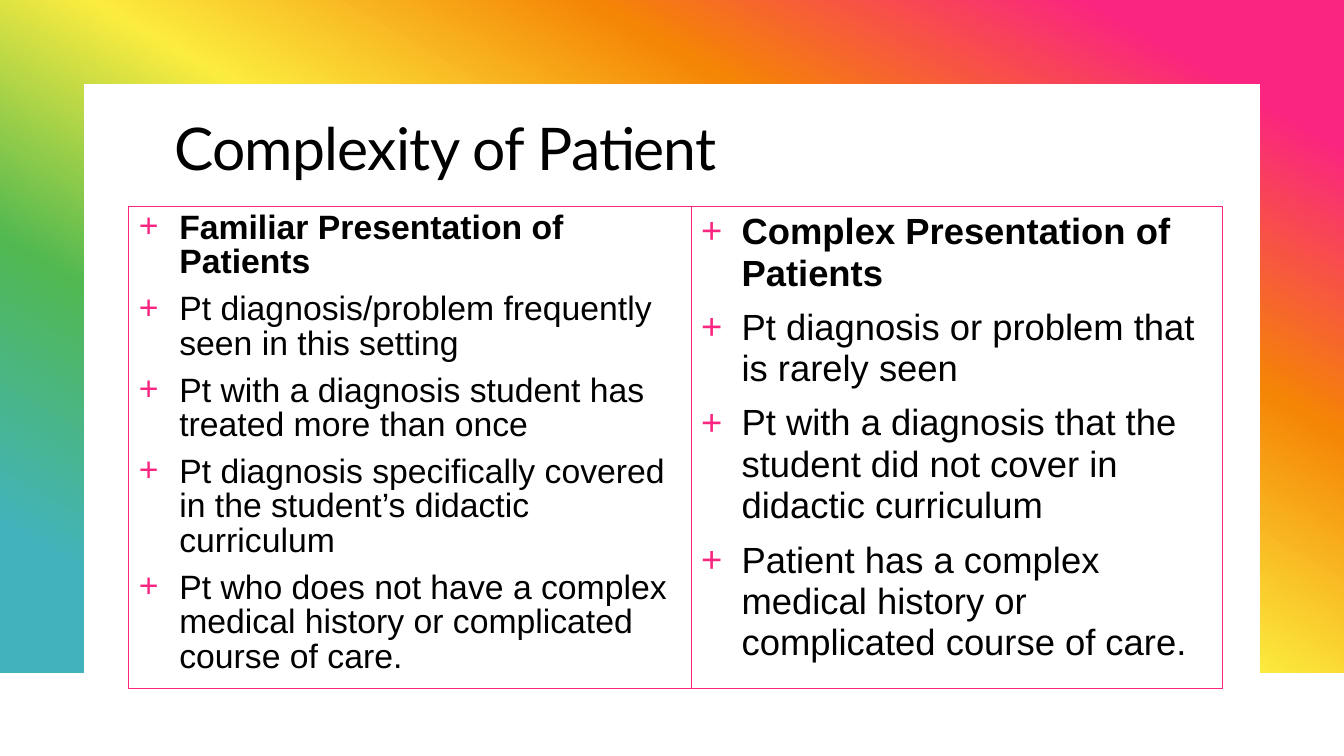
from copy import deepcopy

from lxml import etree
from pptx import Presentation
from pptx.dml.color import RGBColor
from pptx.enum.shapes import MSO_SHAPE
from pptx.enum.text import MSO_ANCHOR, PP_ALIGN
from pptx.oxml.ns import qn
from pptx.util import Cm, Pt

RECTANGLE = MSO_SHAPE.RECTANGLE
TOP = MSO_ANCHOR.TOP
LEFT = PP_ALIGN.LEFT
PINK = "FA2481"
RAINBOW = [(0.1, PINK), (0.3, "F58505"), (0.5, "FCEC3F"), (0.7, "51B851"), (0.9, "42B3BD")]
COLUMN_TOP, COLUMN_HEIGHT = 5.21, 12.14
INDENT = Cm(1.02)


def color(hex_string):
    return RGBColor.from_string(hex_string)


def add_text(frame, paragraphs, size, font, line_spacing, bullet=None, bold_first=False,
             space_before=0, letter_spacing=None):
    frame.word_wrap = True
    frame.vertical_anchor = TOP
    for index, text in enumerate(paragraphs):
        paragraph = frame.add_paragraph() if index else frame.paragraphs[0]
        paragraph.alignment = LEFT
        paragraph.line_spacing = line_spacing
        paragraph.space_before = Pt(space_before)
        run = paragraph.add_run()
        run.text = text
        run.font.name = font
        run.font.size = Pt(size)
        run.font.bold = bold_first and index == 0
        run.font.color.rgb = color("000000")
        if letter_spacing:
            run.font._element.set("spc", str(round(letter_spacing * 100)))
        if bullet:
            properties = paragraph._p.get_or_add_pPr()
            properties.set("marL", str(INDENT))
            properties.set("indent", str(-INDENT))
            bullet_color = etree.SubElement(properties, qn("a:buClr"))
            etree.SubElement(bullet_color, qn("a:srgbClr")).set("val", PINK)
            etree.SubElement(properties, qn("a:buFont")).set("typeface", font)
            etree.SubElement(properties, qn("a:buChar")).set("char", bullet)


presentation = Presentation()
presentation.slide_width = Cm(33.87)
presentation.slide_height = Cm(19.05)
slide = presentation.slides.add_slide(presentation.slide_layouts[6])

backdrop = slide.shapes.add_shape(RECTANGLE, 0, 0, presentation.slide_width, Cm(16.95))
backdrop.shadow.inherit = False
backdrop.line.fill.background()
backdrop.fill.gradient()
backdrop.fill.gradient_angle = 240
stop_list = backdrop._element.spPr.find(qn("a:gradFill")).find(qn("a:gsLst"))
while len(stop_list) < len(RAINBOW):
    stop_list.append(deepcopy(stop_list[0]))
for stop, (position, stop_color) in zip(backdrop.fill.gradient_stops, RAINBOW):
    stop.position = position
    stop.color.rgb = color(stop_color)

panel = slide.shapes.add_shape(RECTANGLE, Cm(2.12), Cm(2.12), Cm(29.63), Cm(15.16))
panel.shadow.inherit = False
panel.line.fill.background()
panel.fill.solid()
panel.fill.fore_color.rgb = color("FFFFFF")

title = slide.shapes.add_textbox(Cm(4.14), Cm(2.82), Cm(25.4), Cm(2.69))
add_text(title.text_frame, ["Complexity of Patient"], size=42, font="Lato",
         line_spacing=0.95, letter_spacing=-0.5)

columns = [
    (3.25, 14.17, 24.1, 0.85, [
        "Familiar Presentation of Patients",
        "Pt diagnosis/problem frequently seen in this setting",
        "Pt with a diagnosis student has treated more than once",
        "Pt diagnosis specifically covered in the student’s didactic curriculum",
        "Pt who does not have a complex medical history or complicated course of care.",
    ]),
    (17.42, 13.39, 26, 0.95, [
        "Complex Presentation of Patients",
        "Pt diagnosis or problem that is rarely seen",
        "Pt with a diagnosis that the student did not cover in didactic curriculum",
        "Patient has a complex medical history or complicated course of care.",
    ]),
]
for left, width, size, line_spacing, items in columns:
    column = slide.shapes.add_shape(
        RECTANGLE, Cm(left), Cm(COLUMN_TOP), Cm(width), Cm(COLUMN_HEIGHT))
    column.shadow.inherit = False
    column.fill.background()
    column.line.color.rgb = color(PINK)
    column.line.width = Pt(0.75)
    add_text(column.text_frame, items, size=size, font="Arial", line_spacing=line_spacing,
             bullet="+", bold_first=True, space_before=9)

presentation.save("out.pptx")
